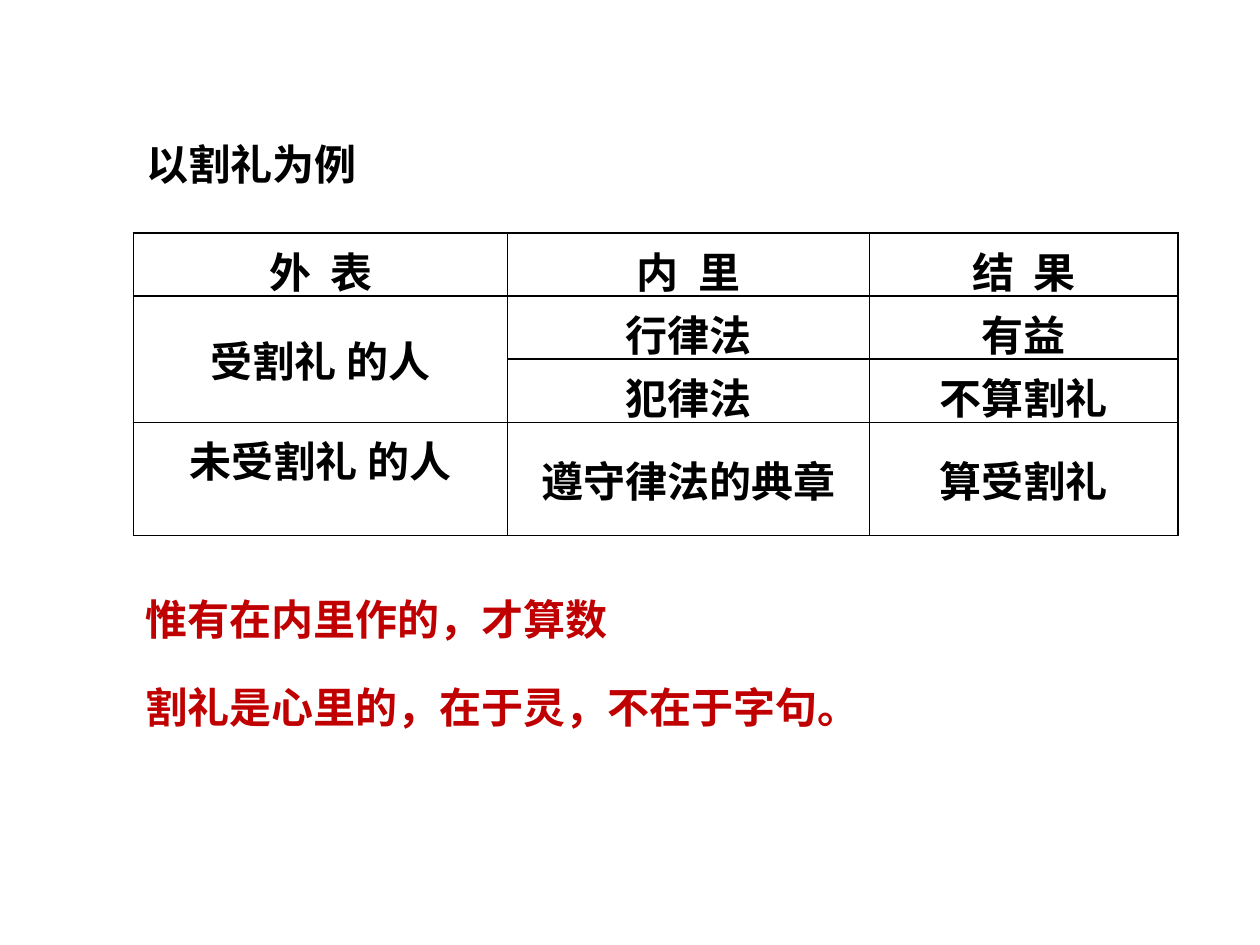
from dataclasses import dataclass

import lxml.etree
import pptx
import pptx.dml.color
import pptx.enum.text
import pptx.oxml.ns
import pptx.util
from pptx.util import Inches

BLACK = "000000"
RED = "C00000"
BODY_FONT = "Calibri"
HEADER_FONT = "Noto Sans CJK SC"
LEFT = 1.06
LINE_HEIGHT = 0.5
COLUMN_WIDTHS = (2.97, 2.87, 2.45)
ROW_HEIGHTS = (0.5, 0.5, 0.5, 0.9)
CENTER = pptx.enum.text.PP_ALIGN.CENTER
MIDDLE = pptx.enum.text.MSO_ANCHOR.MIDDLE
TOP = pptx.enum.text.MSO_ANCHOR.TOP


@dataclass
class Statement:
    text: str
    top: float
    width: float


@dataclass
class TableEntry:
    row: int
    column: int
    text: str
    anchor: pptx.enum.text.MSO_ANCHOR = MIDDLE


HEADING = Statement("以割礼为例", 1.05, 1.87)
CONCLUSIONS = (
    Statement("惟有在内里作的，才算数", 4.66, 3.88),
    Statement("割礼是心里的，在于灵，不在于字句。", 5.36, 5.89),
)
ENTRIES = (
    TableEntry(0, 0, "外  表"),
    TableEntry(0, 1, "内  里"),
    TableEntry(0, 2, "结  果"),
    TableEntry(1, 0, "受割礼 的人"),
    TableEntry(1, 1, "行律法"),
    TableEntry(1, 2, "有益"),
    TableEntry(2, 1, "犯律法"),
    TableEntry(2, 2, "不算割礼"),
    TableEntry(3, 0, "未受割礼 的人", TOP),
    TableEntry(3, 1, "遵守律法的典章"),
    TableEntry(3, 2, "算受割礼"),
)


def color(value: str) -> pptx.dml.color.RGBColor:
    return pptx.dml.color.RGBColor.from_string(value)


def add_span(para, text: str, font_name: str, hex_color: str) -> None:
    span = para.add_run()
    span.text = text
    span.font.name = font_name
    span.font.size = pptx.util.Pt(24)
    span.font.bold = True
    span.font.color.rgb = color(hex_color)


def fill_statement(box, statement: Statement, hex_color: str) -> None:
    box.left, box.top = Inches(LEFT), Inches(statement.top)
    box.width, box.height = Inches(statement.width), Inches(LINE_HEIGHT)
    frame = box.text_frame
    frame.word_wrap = False
    frame.auto_size = pptx.enum.text.MSO_AUTO_SIZE.SHAPE_TO_FIT_TEXT
    frame.vertical_anchor = TOP
    para = frame.paragraphs[0]
    para.alignment = pptx.enum.text.PP_ALIGN.LEFT
    add_span(para, statement.text, BODY_FONT, hex_color)


def style_cell(cell) -> None:
    """Give the cell thin black borders and no fill."""
    qualified = pptx.oxml.ns.qn
    properties = cell._tc.get_or_add_tcPr()
    for side in ("lnL", "lnR", "lnT", "lnB"):
        line = lxml.etree.SubElement(
            properties, qualified(f"a:{side}"), w=str(pptx.util.Pt(1))
        )
        fill = lxml.etree.SubElement(line, qualified("a:solidFill"))
        lxml.etree.SubElement(fill, qualified("a:srgbClr"), val=BLACK)
    cell.fill.background()


def add_comparison_table(page) -> None:
    table = page.shapes.add_table(
        len(ROW_HEIGHTS), len(COLUMN_WIDTHS), Inches(LEFT), Inches(1.85),
        Inches(sum(COLUMN_WIDTHS)), Inches(sum(ROW_HEIGHTS)),
    ).table
    table.first_row = False
    table.horz_banding = False
    for column, width in zip(table.columns, COLUMN_WIDTHS):
        column.width = Inches(width)
    for row, height in zip(table.rows, ROW_HEIGHTS):
        row.height = Inches(height)
    for cell in table.iter_cells():
        style_cell(cell)
    table.cell(1, 0).merge(table.cell(2, 0))
    for entry in ENTRIES:
        cell = table.cell(entry.row, entry.column)
        cell.vertical_anchor = entry.anchor
        para = cell.text_frame.paragraphs[0]
        para.alignment = CENTER
        font_name = HEADER_FONT if entry.row == 0 else BODY_FONT
        add_span(para, entry.text, font_name, BLACK)


def main() -> None:
    deck = pptx.Presentation()
    deck.slide_width, deck.slide_height = Inches(10), Inches(7.5)
    page = deck.slides.add_slide(deck.slide_layouts[5])
    fill_statement(page.shapes.title, HEADING, BLACK)
    add_comparison_table(page)
    for conclusion in CONCLUSIONS:
        box = page.shapes.add_textbox(0, 0, 0, 0)
        fill_statement(box, conclusion, RED)
    deck.save("out.pptx")


if __name__ == "__main__":
    main()
